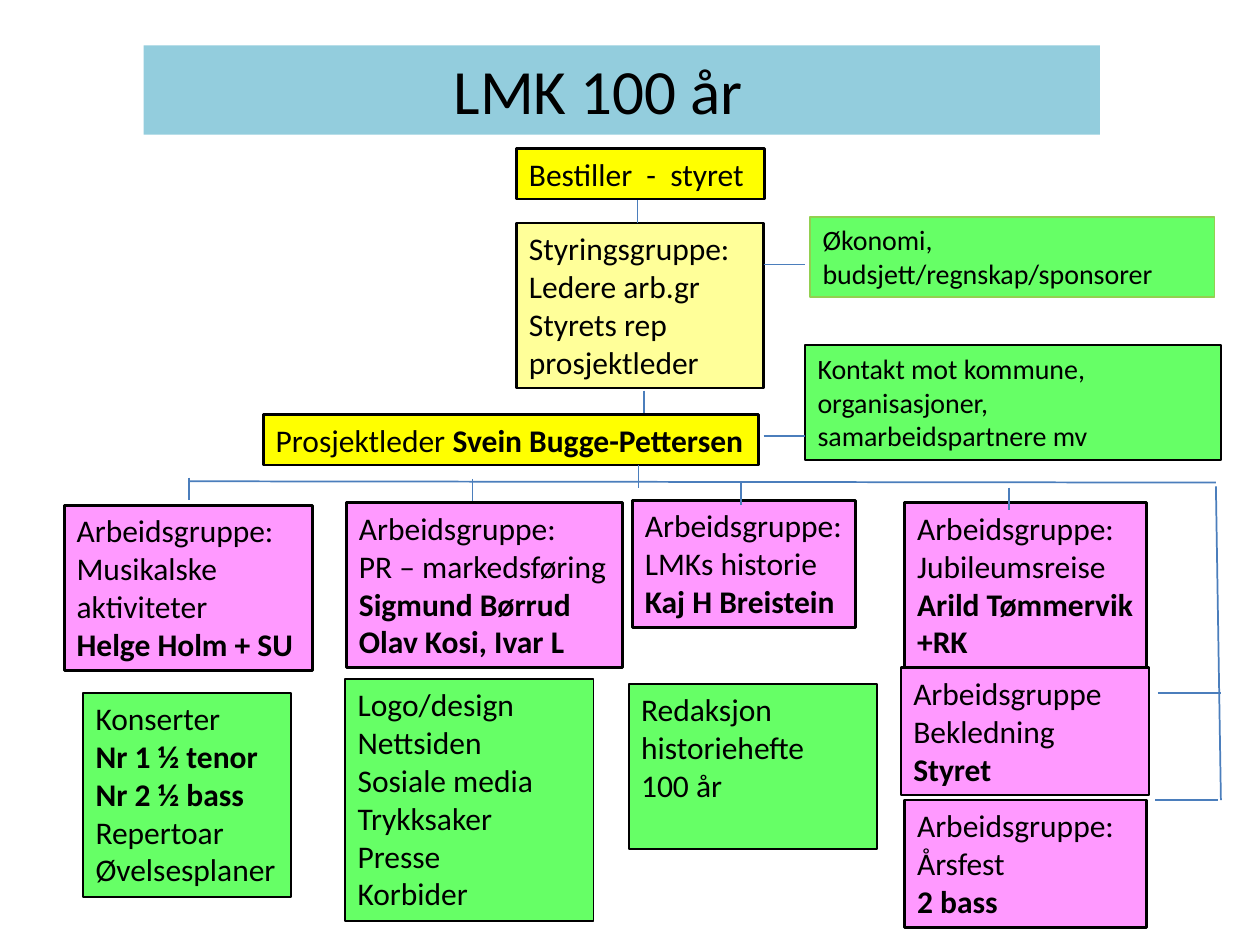
"""Build the organisation chart for the LMK 100 år jubilee."""
from lxml.etree import SubElement
from pptx import Presentation
from pptx.dml.color import RGBColor
from pptx.enum.shapes import MSO_CONNECTOR, MSO_SHAPE
from pptx.enum.text import MSO_ANCHOR, PP_ALIGN
from pptx.oxml.ns import qn
from pptx.util import Inches, Pt

BLACK, BLUE, OLIVE = "000000", "4B7EBC", "92D050"
SKY, YELLOW, CREAM, PINK, GREEN = "93CDDD", "FFFF00", "FFFF99", "FF99FF", "66FF66"
BOLD = "**"

TITLE = ("LMK 100 år", (1.14, 0.36, 7.59, 0.71))

LEADERSHIP = [
    (["Bestiller  -  styret"], (4.1, 1.18, 1.97, 0.4), YELLOW),
    (["Prosjektleder **Svein Bugge-Pettersen"], (2.09, 3.29, 3.93, 0.4), YELLOW),
    (["Styringsgruppe:", "Ledere arb.gr", "Styrets rep", "prosjektleder"],
     (4.1, 1.77, 1.96, 1.31), CREAM),
]

WORK_GROUPS = [
    (["Arbeidsgruppe: Musikalske aktiviteter", "**Helge Holm + SU"],
     (0.51, 4.01, 1.97, 1.31)),
    (["Arbeidsgruppe:", "PR – markedsføring", "**Sigmund Børrud", "**Olav Kosi, Ivar L"],
     (2.75, 3.99, 2.19, 1.31)),
    (["Arbeidsgruppe:", "LMKs historie", "**Kaj H Breistein"], (5.02, 3.97, 1.77, 1.01)),
    (["Arbeidsgruppe:", "Jubileumsreise", "**Arild Tømmervik +RK"],
     (7.18, 3.99, 1.92, 1.31)),
    (["Arbeidsgruppe", "Bekledning", "**Styret"], (7.15, 5.3, 1.97, 1.01)),
    (["Arbeidsgruppe:", "Årsfest", "**2 bass"], (7.18, 6.35, 1.92, 1.01)),
]

TASKS = [
    (["Logo/design", "Nettsiden", "Sosiale media", "Trykksaker", "Presse", "Korbider"],
     (2.74, 5.39, 1.97, 1.92)),
    (["Redaksjon historiehefte", "100 år"], (4.99, 5.43, 1.97, 1.31)),
    (["Konserter", "**Nr 1 ½ tenor", "**Nr 2 ½ bass", "Repertoar", "Øvelsesplaner"],
     (0.66, 5.5, 1.65, 1.62)),
]

SUPPORT = [
    (["Økonomi, budsjett/regnskap/sponsorer"], (6.43, 1.72, 3.21, 0.64), OLIVE),
    (["Kontakt mot kommune, organisasjoner, samarbeidspartnere mv"],
     (6.39, 2.74, 3.3, 0.91), BLACK),
]

DROP = 0.18
DROPS = [(5.06, 1.59), (5.11, 3.1), (1.5, 3.79), (3.75, 3.8), (5.88, 3.83), (8.01, 3.87)]
SUPPORT_LINK_TOPS = [2.1, 3.46]
BRANCHES = [
    (1.5, 3.82, 9.65, 3.83),
    (9.65, 3.86, 9.69, 6.35),
    (9.19, 5.5, 9.69, 5.5),
    (9.17, 6.35, 9.67, 6.35),
]


def color(value):
    return RGBColor.from_string(value)


def write(frame, paragraphs, size=18, indent=0.1):
    frame.word_wrap = True
    frame.vertical_anchor = MSO_ANCHOR.TOP
    frame.margin_left = Inches(indent)
    for number, text in enumerate(paragraphs):
        paragraph = frame.add_paragraph() if number else frame.paragraphs[0]
        paragraph.alignment = PP_ALIGN.LEFT
        for part, words in enumerate(text.split(BOLD)):
            if words:
                run = paragraph.add_run()
                run.text = words
                run.font.name = "Calibri"
                run.font.size = Pt(size)
                run.font.bold = part % 2 == 1
                run.font.color.rgb = color(BLACK)


def add_box(slide, paragraphs, place, fill, line=BLACK, width=1.5, **text_format):
    box = slide.shapes.add_shape(MSO_SHAPE.RECTANGLE, *map(Inches, place))
    box.shadow.inherit = False
    box.fill.solid()
    box.fill.fore_color.rgb = color(fill)
    if line:
        box.line.color.rgb = color(line)
        box.line.width = Pt(width)
    else:
        box.line.fill.background()
    write(box.text_frame, paragraphs, **text_format)


def add_link(slide, ends, width=1):
    link = slide.shapes.add_connector(MSO_CONNECTOR.STRAIGHT, *map(Inches, ends))
    link.line.color.rgb = color(BLUE)
    link.line.width = Pt(width)
    SubElement(link._element.spPr, qn("a:effectLst"))


def main():
    deck = Presentation()
    deck.slide_width, deck.slide_height = Inches(10), Inches(7.5)
    slide = deck.slides.add_slide(deck.slide_layouts[6])

    title, title_place = TITLE
    add_box(slide, [title], title_place, SKY, line=None, size=36, indent=2.46)
    for paragraphs, place, fill in LEADERSHIP:
        add_box(slide, paragraphs, place, fill)
    for paragraphs, place in WORK_GROUPS:
        add_box(slide, paragraphs, place, PINK)
    for paragraphs, place in TASKS:
        add_box(slide, paragraphs, place, GREEN, width=1)
    for paragraphs, place, line in SUPPORT:
        add_box(slide, paragraphs, place, GREEN, line=line, width=1, size=16)

    for x, top in DROPS:
        add_link(slide, (x, top, x, top + DROP))
    add_link(slide, (5.07, 3.69, 5.07, 3.69 + DROP), width=0.75)
    for top in SUPPORT_LINK_TOPS:
        add_link(slide, (6.06, top, 6.39, top))
    for ends in BRANCHES:
        add_link(slide, ends)

    deck.save("out.pptx")


if __name__ == "__main__":
    main()
